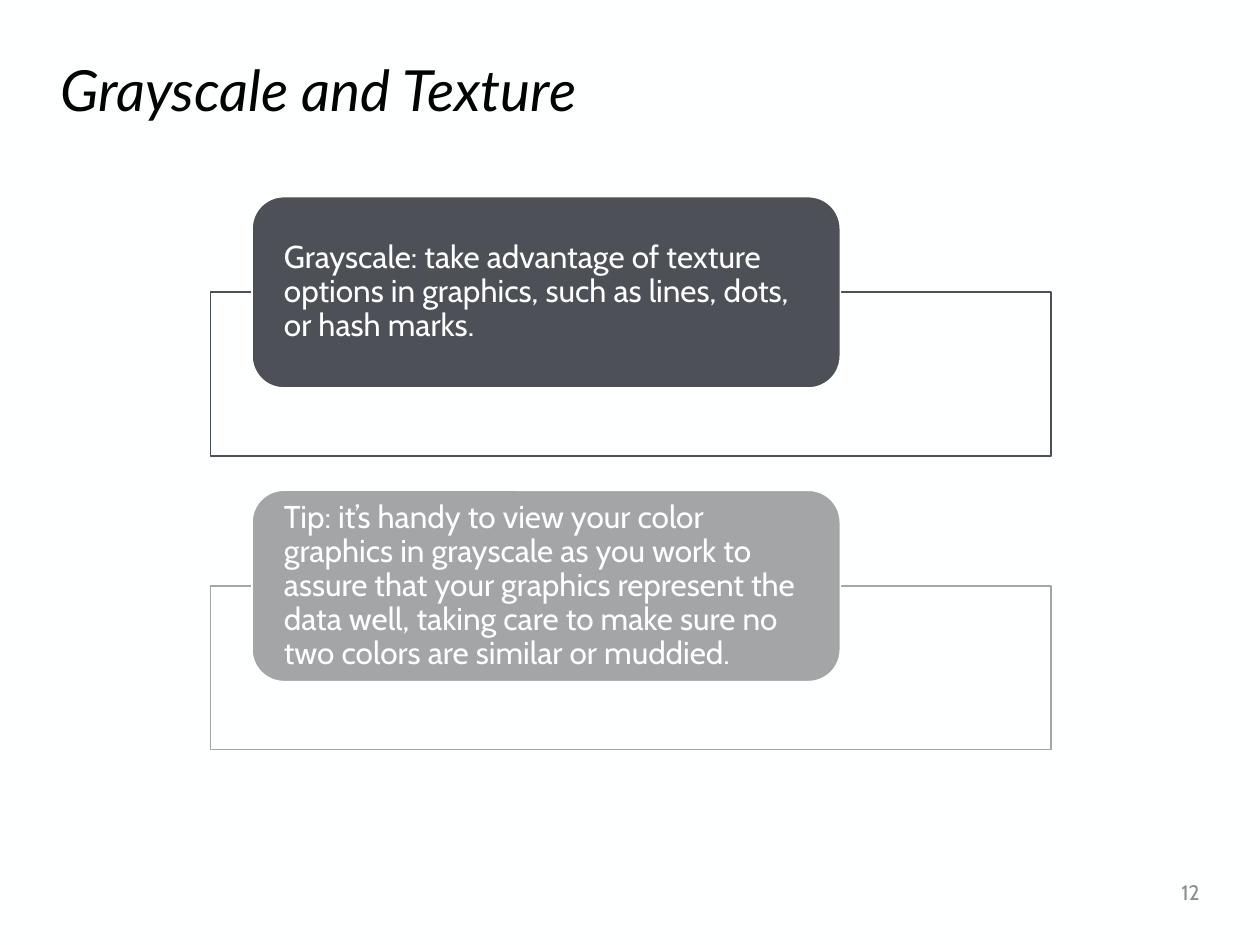
from lxml import etree
from pptx import Presentation
from pptx.dml.color import RGBColor
from pptx.enum.shapes import MSO_SHAPE as Shape
from pptx.enum.text import MSO_ANCHOR as Anchor, PP_ALIGN as Align
from pptx.oxml.ns import qn
from pptx.util import Inches, Pt

COLORS = {
    "paper": "FEFFFF",
    "title": "000000",
    "number": "8C8C8C",
    "dark": "4D5157",
    "light": "A3A5A7",
}

ADVICE = [
    ("dark", "Grayscale: take advantage of texture options in graphics, "
             "such as lines, dots, or hash marks."),
    ("light", "Tip: it’s handy to view your color graphics in grayscale as you "
              "work to assure that your graphics represent the data well, taking "
              "care to make sure no two colors are similar or muddied."),
]
FIRST_TOP, STEP = 1.56, 2.33


def rgb(name):
    return RGBColor.from_string(COLORS[name])


def write(frame, text, size, font, color, align=Align.LEFT, spacing=1.0, italic=False):
    frame.word_wrap = True
    frame.vertical_anchor = Anchor.MIDDLE
    paragraph = frame.paragraphs[0]
    paragraph.alignment = align
    paragraph.line_spacing = spacing
    run = paragraph.add_run()
    run.text = text
    run.font.size = Pt(size)
    run.font.name = font
    run.font.italic = italic
    run.font.color.rgb = rgb(color)


def add_label(slide, box, *args, **kwargs):
    label = slide.shapes.add_textbox(*map(Inches, box))
    write(label.text_frame, *args, **kwargs)


def add_panel(slide, kind, box, fill, line):
    panel = slide.shapes.add_shape(kind, *map(Inches, box))
    panel.shadow.inherit = False
    panel.fill.solid()
    panel.fill.fore_color.rgb = rgb(fill)
    panel.line.color.rgb = rgb(line)
    panel.line.width = Pt(1)
    return panel


def set_opacity(panel, percent):
    color = panel.fill._xPr.find(qn("a:solidFill"))[0]
    etree.SubElement(color, qn("a:alpha")).set("val", str(percent * 1000))


def add_advice(slide, top, color, text):
    # Outlined frame behind, overlapped by the rounded card
    frame = add_panel(slide, Shape.RECTANGLE, (1.67, top + 0.76, 6.67, 1.3), "paper", color)
    set_opacity(frame, 90)
    card = add_panel(slide, Shape.ROUNDED_RECTANGLE, (2, top, 4.67, 1.52), color, "paper")
    body = card.text_frame
    body.margin_left = body.margin_right = Inches(0.18)
    body.margin_top = body.margin_bottom = 0
    write(body, text, 18, "Cabin", "paper", spacing=0.9)


def main():
    deck = Presentation()
    deck.slide_width, deck.slide_height = Inches(10), Inches(7.5)
    slide = deck.slides.add_slide(deck.slide_layouts[6])
    slide.background.fill.solid()
    slide.background.fill.fore_color.rgb = rgb("paper")

    # Title and page number
    add_label(slide, (0.38, 0.42, 9.24, 0.64), "Grayscale and Texture",
              32.4, "Lato", "title", spacing=0.9, italic=True)
    add_label(slide, (8.42, 6.88, 1.2, 0.4), "12", 12, "Cabin", "number", align=Align.RIGHT)

    # Advice cards
    for index, (color, text) in enumerate(ADVICE):
        add_advice(slide, FIRST_TOP + index * STEP, color, text)

    deck.save("out.pptx")


if __name__ == "__main__":
    main()
